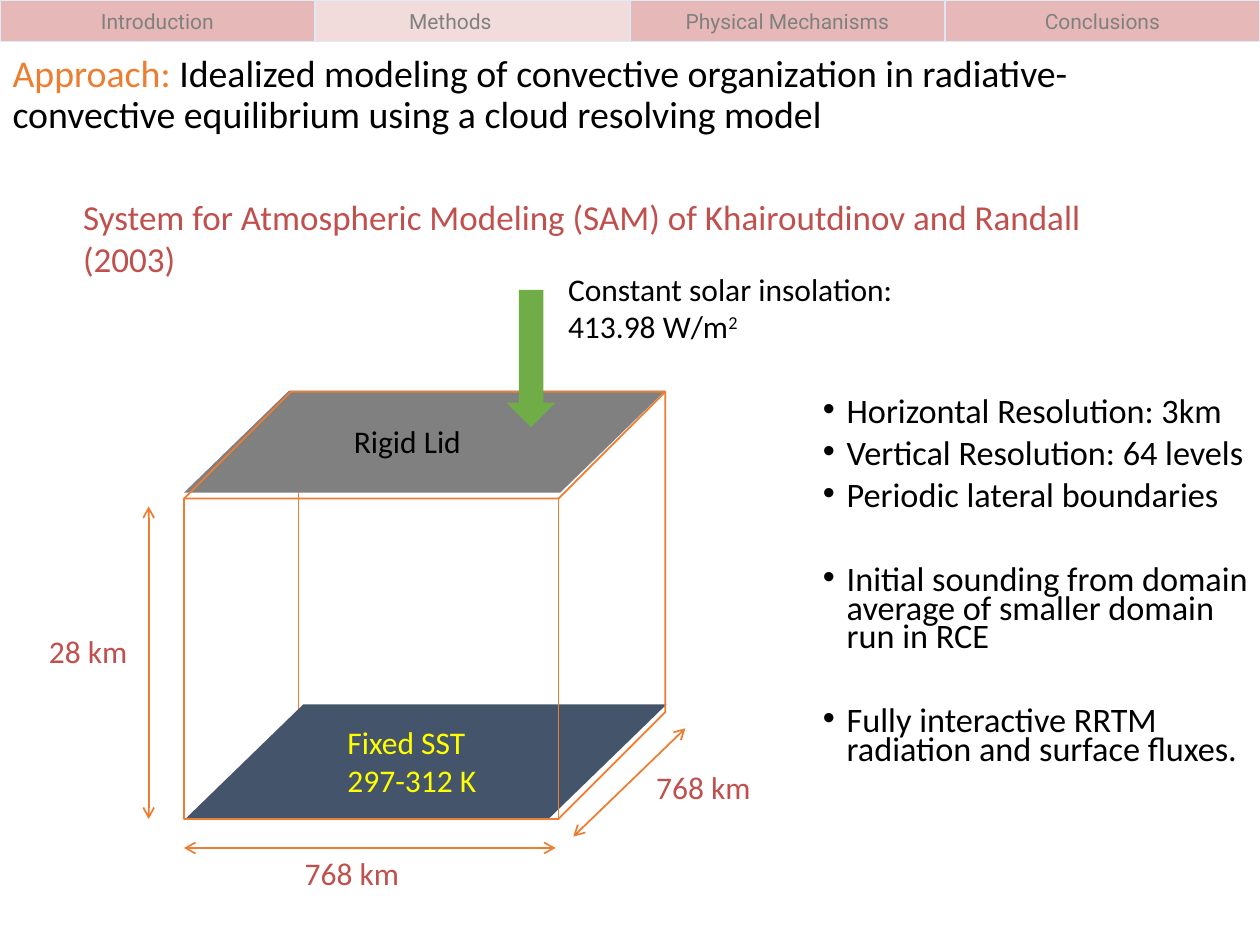
import pptx
import pptx.dml.color
import pptx.enum.shapes
import pptx.enum.text
import pptx.oxml
import pptx.oxml.ns
import pptx.util

SCALE = 9144  # EMU per px, 100 px to the inch
COLOURS = {
    "orange": "ED7D31", "red": "C0504D", "black": "000000", "yellow": "FFFF00",
    "tab": "E6B9B8", "current tab": "F2DCDB", "tab edge": "DEEBF7",
    "grey": "808080", "sea": "44546A", "green": "70AD47",
}
SHAPES = pptx.enum.shapes.MSO_SHAPE
ANCHORS = pptx.enum.text.MSO_ANCHOR
ALIGN = pptx.enum.text.PP_ALIGN


def px(length):
    return pptx.util.Emu(length * SCALE)


def colour(name):
    return pptx.dml.color.RGBColor.from_string(COLOURS[name])


def element(tag, **attributes):
    node = pptx.oxml.parse_xml(f"<a:{tag} {pptx.oxml.ns.nsdecls('a')}/>")
    for key, value in attributes.items():
        node.set(key, value)
    return node


def write(para, text, size=18, tone="black", font="Calibri", raised=False):
    span = para.add_run()
    span.text = text
    span.font.size = pptx.util.Pt(size)
    span.font.name = font
    span.font.color.rgb = colour(tone)
    if raised:
        span.font._element.set("baseline", "30000")
    return span


class Painter:
    def __init__(self, page, line_width=1):
        self.page = page
        self.line_width = pptx.util.Pt(line_width)

    def place(self, box, left, top, width, height):
        box.left, box.top, box.width, box.height = map(px, (left, top, width, height))
        box.text_frame.word_wrap = True
        box.text_frame.auto_size = pptx.enum.text.MSO_AUTO_SIZE.NONE
        return box.text_frame

    def shape(self, kind, frame, fill=None, edge=None, adjust=None):
        shape = self.page.shapes.add_shape(kind, *map(px, frame))
        shape.shadow.inherit = False
        if fill:
            shape.fill.solid()
            shape.fill.fore_color.rgb = colour(fill)
        else:
            shape.fill.background()
        if edge:
            shape.line.color.rgb = colour(edge)
            shape.line.width = self.line_width
        else:
            shape.line.fill.background()
        if adjust:
            shape.adjustments[0] = adjust
        return shape

    def line(self, start, end, arrows=False):
        kind = pptx.enum.shapes.MSO_CONNECTOR.STRAIGHT
        line = self.page.shapes.add_connector(kind, *map(px, start + end))
        line.line.color.rgb = colour("orange")
        line.line.width = self.line_width
        if arrows:
            for tag in ("headEnd", "tailEnd"):
                line.line._get_or_add_ln().append(element(tag, type="arrow"))
        line._element.spPr.append(element("effectLst"))

    def label(self, frame, *lines, **style):
        box = self.page.shapes.add_textbox(*map(px, frame))
        text_frame = box.text_frame
        text_frame.word_wrap = True
        for number, text in enumerate(lines):
            para = text_frame.add_paragraph() if number else text_frame.paragraphs[0]
            write(para, text, **style)
        return text_frame

    def tab(self, left, text, current):
        fill = "current tab" if current else "tab"
        shape = self.shape(SHAPES.RECTANGLE, (left, 0, 250, 33), fill, "tab edge")
        shape.line.width = pptx.util.Pt(0.5)
        text_frame = shape.text_frame
        text_frame.vertical_anchor = ANCHORS.MIDDLE
        if current:
            text_frame.margin_right = px(45)
        para = text_frame.paragraphs[0]
        para.alignment = ALIGN.CENTER
        write(para, text, size=12, tone="grey", font="Roboto")

    def title(self, frame, lead, text):
        text_frame = self.place(self.page.shapes.title, *frame)
        text_frame.vertical_anchor = ANCHORS.MIDDLE
        para = text_frame.paragraphs[0]
        para.alignment = ALIGN.LEFT
        para.line_spacing = 0.9
        write(para, lead, size=21.6, tone="orange")
        write(para, text, size=21.6)

    def bullets(self, frame, groups):
        text_frame = self.place(self.page.placeholders[1], *frame)
        text_frame.margin_right = px(5)
        para = None
        for group in groups:
            for number, text in enumerate(group):
                if para is None:
                    para, gap = text_frame.paragraphs[0], 0
                else:
                    para, gap = text_frame.add_paragraph(), 7.5 if number else 31.5
                settings = para._element.get_or_add_pPr()
                settings.set("marL", str(px(19)))
                settings.set("indent", str(-px(19)))
                settings.append(element("buChar", char="•"))
                para.line_spacing = 0.7
                para.space_before = pptx.util.Pt(gap)
                write(para, text, size=19.6)


def main():
    deck = pptx.Presentation()
    deck.slide_width, deck.slide_height = px(1000), px(750)
    painter = Painter(deck.slides.add_slide(deck.slide_layouts[1]))

    # Section tabs
    sections = ("Introduction", "Methods", "Physical Mechanisms", "Conclusions")
    for number, section in enumerate(sections):
        painter.tab(number * 250, section, section == "Methods")

    # Title, model settings and model name
    painter.title((0, 38, 900, 76), "Approach: ",
                  "Idealized modeling of convective organization in "
                  "radiative-convective equilibrium using a cloud resolving model")
    painter.bullets((643, 313, 357, 405), (
        ("Horizontal Resolution: 3km", "Vertical Resolution: 64 levels",
         "Periodic lateral boundaries"),
        ("Initial sounding from domain average of smaller domain run in RCE",),
        ("Fully interactive RRTM radiation and surface fluxes.",),
    ))
    model = painter.label(
        (50, 155, 877, 75),
        "System for Atmospheric Modeling (SAM) of Khairoutdinov and Randall (2003)",
        size=20, tone="red")
    model.margin_left, model.margin_right = px(16), px(5)
    model.margin_top = model.margin_bottom = 0

    # Model domain: hidden edge, sea surface, lid and outline
    painter.line((237, 330), (237, 578))
    painter.shape(SHAPES.PARALLELOGRAM, (147, 559, 382, 91), "sea", adjust=1.03)
    painter.shape(SHAPES.PARALLELOGRAM, (146, 310, 382, 81), "grey", adjust=1.03)
    painter.shape(SHAPES.CUBE, (146, 311, 382, 339), edge="orange")

    # Dimensions
    for start, end in (((118, 650), (118, 402)), ((146, 673), (441, 673)),
                       ((455, 664), (544, 578))):
        painter.line(start, end, arrows=True)
    for frame, distance in (((232, 673, 137, 40), "768 km"),
                            ((511, 605, 106, 40), "768 km"),
                            ((29, 497, 137, 40), "28 km")):
        painter.label(frame, distance, tone="red")

    # Boundary conditions
    painter.label((271, 330, 125, 40), "Rigid Lid")
    painter.label((266, 569, 137, 71), "Fixed SST", "297-312 K", tone="yellow")
    painter.shape(SHAPES.DOWN_ARROW, (402, 230, 39, 109), "green")
    solar = painter.label((441, 209, 311, 71), "Constant solar insolation: 413.98 W/m")
    write(solar.paragraphs[0], "2", raised=True)

    deck.save("out.pptx")


if __name__ == "__main__":
    main()
